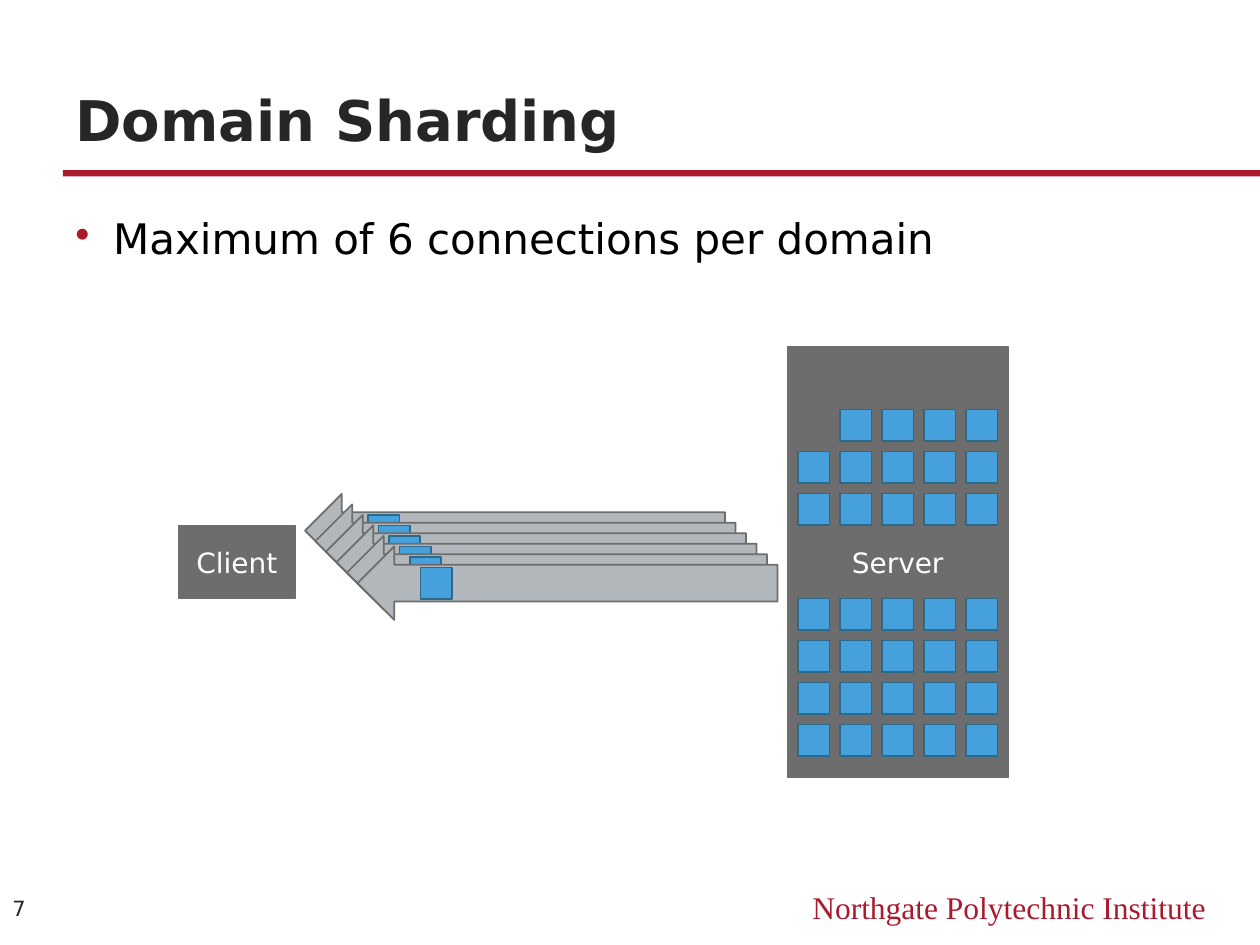
from collections import namedtuple

from lxml.etree import SubElement
from pptx import Presentation
from pptx.dml.color import RGBColor
from pptx.enum.shapes import MSO_SHAPE
from pptx.enum.text import MSO_ANCHOR, PP_ALIGN
from pptx.oxml.ns import qn
from pptx.util import Inches, Pt

Box = namedtuple("Box", "left top width height")

RED, DARK, BLACK, WHITE = "AB192D", "262626", "000000", "FFFFFF"
GRAY, SILVER, BLUE, NAVY = "6D6D6D", "B2B7BB", "46A0DC", "2C6A8C"
SANS, SERIF = "DejaVu Sans", "Times New Roman"
UNIT = 1 / 12
PACKET = 3 * UNIT
PITCH = 4 * UNIT


def color(code):
    """Turn a hex string into a colour."""
    return RGBColor.from_string(code)


def add_figure(shapes, kind, box, fill, line=None):
    """Add a flat filled shape, outlined when a line colour is given."""
    figure = shapes.add_shape(kind, *map(Inches, box))
    figure.shadow.inherit = False
    figure.fill.solid()
    figure.fill.fore_color.rgb = color(fill)
    if line:
        figure.line.color.rgb = color(line)
        figure.line.width = Pt(1)
    else:
        figure.line.fill.background()
    return figure


def write(shape, text, size, code, face=SANS, align=PP_ALIGN.LEFT,
          anchor=MSO_ANCHOR.TOP, wrap=True):
    """Write one styled paragraph into a shape and return it."""
    frame = shape.text_frame
    frame.word_wrap = wrap
    frame.vertical_anchor = anchor
    para = frame.paragraphs[0]
    para.text = text
    para.alignment = align
    para.font.name = face
    para.font.size = Pt(size)
    para.font.color.rgb = color(code)
    return para


def add_label(page, box, text, size, code, **style):
    """Add a text box holding one paragraph."""
    return write(page.shapes.add_textbox(*map(Inches, box)), text, size, code, **style)


def add_bullet(para, code):
    """Give a paragraph a hanging coloured bullet."""
    props = para._p.get_or_add_pPr()
    props.set("marL", str(Inches(0.3)))
    props.set("indent", str(Inches(-0.3)))
    tint = SubElement(props, qn("a:buClr"))
    SubElement(tint, qn("a:srgbClr")).set("val", code)
    SubElement(props, qn("a:buChar")).set("char", "•")


def add_heading(page, box):
    """Place the title above its rule, which runs to the slide edge."""
    rule = Box(box.left, box.top + 0.97, box.width + 0.5, 0.05)
    add_figure(page.shapes, MSO_SHAPE.RECTANGLE, rule, RED)
    title = add_label(page, box, "Domain Sharding", 32, DARK, anchor=MSO_ANCHOR.BOTTOM)
    title.font.bold = True


def add_body(page, box):
    """Place the bulleted statement."""
    para = add_label(page, box, "Maximum of 6 connections per domain", 24, BLACK)
    para.line_spacing = 0.95
    para.space_before = Pt(12)
    add_bullet(para, RED)


def add_footer(page, box):
    """Place the slide number at the left and the institute at the right."""
    number = Box(box.left, box.top, 0.5, box.height)
    add_label(page, number, "7", 12, DARK, anchor=MSO_ANCHOR.MIDDLE)
    institute = Box(box.left + 6, box.top + 0.01, 3.67, 0.4)
    add_label(page, institute, "Northgate Polytechnic Institute", 18, RED,
              face=SERIF, align=PP_ALIGN.RIGHT)


def add_host(page, box, name):
    """Place a named gray machine."""
    host = add_figure(page.shapes, MSO_SHAPE.RECTANGLE, box, GRAY, GRAY)
    write(host, name, 16, WHITE, align=PP_ALIGN.CENTER,
          anchor=MSO_ANCHOR.MIDDLE, wrap=False)


def add_packet(shapes, left, top):
    """Place one blue packet."""
    add_figure(shapes, MSO_SHAPE.RECTANGLE, Box(left, top, PACKET, PACKET), BLUE, NAVY)


def add_server(page, box):
    """Place the server with packet rows above and below its name."""
    add_host(page, box, "Server")
    for offset, rows in ((0.5, 3), (2, 4)):
        for row in range(rows):
            first = 1 if offset == 0.5 and row == 0 else 0
            for column in range(first, 5):
                add_packet(page.shapes, box.left + UNIT + column * PITCH,
                           box.top + offset + row * PITCH)


def add_connections(page, box, count):
    """Stack arrows diagonally, each carrying one packet."""
    shift = UNIT * (count - 1)
    width, height = box.width - shift, box.height - shift
    for index in range(count):
        left, top = box.left + index * UNIT, box.top + index * UNIT
        shapes = page.shapes.add_group_shape().shapes
        add_figure(shapes, MSO_SHAPE.LEFT_ARROW, Box(left, top, width, height),
                   SILVER, GRAY)
        add_packet(shapes, left + 0.5, top + (height - PACKET) / 2)


def main():
    """Build and save the slide."""
    deck = Presentation()
    deck.slide_width, deck.slide_height = Inches(10), Inches(7.5)
    page = deck.slides.add_slide(deck.slide_layouts[6])
    add_heading(page, Box(0.5, 0.38, 9, 0.88))
    add_body(page, Box(0.5, 1.67, 9, 5.08))
    add_footer(page, Box(0, 6.99, 10, 0.43))
    add_host(page, Box(1.42, 4.17, 0.92, 0.58), "Client")
    add_server(page, Box(6.25, 2.75, 1.75, 3.42))
    add_connections(page, Box(2.42, 3.92, 3.75, 1), 6)
    deck.save("out.pptx")


if __name__ == "__main__":
    main()
